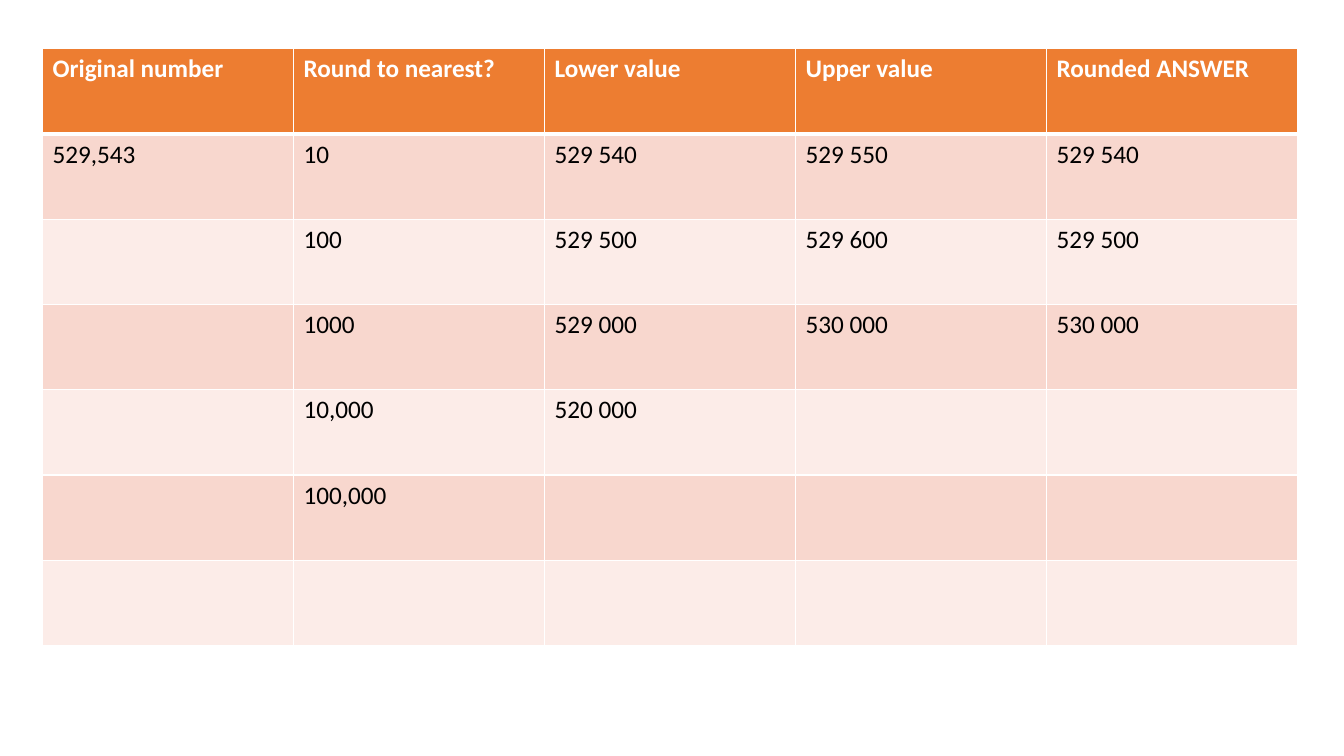
from dataclasses import dataclass

from lxml.etree import SubElement
from pptx import Presentation
from pptx.dml.color import RGBColor
from pptx.oxml.ns import qn
from pptx.slide import Slide
from pptx.table import _Cell
from pptx.util import Pt


@dataclass(frozen=True)
class Theme:
    font: str = "Calibri"
    text_size: float = 18
    header_fill: str = "ED7D31"
    header_text: str = "FFFFFF"
    band_fills: tuple[str, str] = ("F8D7CE", "FCECE8")
    body_text: str = "000000"
    border: str = "FFFFFF"
    thin_border: float = 1
    thick_border: float = 3


@dataclass(frozen=True)
class CellStyle:
    fill: str
    color: str
    bold: bool
    top_border: float
    bottom_border: float


@dataclass(frozen=True)
class RoundingRow:
    original: str = ""
    nearest: str = ""
    lower: str = ""
    upper: str = ""
    answer: str = ""

    def values(self) -> tuple[str, ...]:
        return self.original, self.nearest, self.lower, self.upper, self.answer


THEME = Theme()
PAGE_WIDTH, PAGE_HEIGHT = 960, 540
TABLE_LEFT, TABLE_TOP = 30.4, 34.8
COLUMN_WIDTH, ROW_HEIGHT = 179.3, 60.9

ROWS = [
    RoundingRow("Original number", "Round to nearest?", "Lower value",
                "Upper value", "Rounded ANSWER"),
    RoundingRow("529,543", "10", "529 540", "529 550", "529 540"),
    RoundingRow("", "100", "529 500", "529 600", "529 500"),
    RoundingRow("", "1000", "529 000", "530 000", "530 000"),
    RoundingRow("", "10,000", "520 000"),
    RoundingRow("", "100,000"),
    RoundingRow(),
]


def row_style(row_index: int) -> CellStyle:
    """Give the header its own style and alternate the bands below it."""
    if row_index == 0:
        return CellStyle(THEME.header_fill, THEME.header_text, True,
                         THEME.thin_border, THEME.thick_border)
    top_border = THEME.thick_border if row_index == 1 else THEME.thin_border
    return CellStyle(THEME.band_fills[(row_index - 1) % 2], THEME.body_text, False,
                     top_border, THEME.thin_border)


def set_borders(cell: _Cell, style: CellStyle) -> None:
    """Add the four edges; they must precede the fill in the cell properties."""
    properties = cell._tc.get_or_add_tcPr()
    widths = {
        "a:lnL": THEME.thin_border,
        "a:lnR": THEME.thin_border,
        "a:lnT": style.top_border,
        "a:lnB": style.bottom_border,
    }
    for edge, width in widths.items():
        line = SubElement(properties, qn(edge), w=str(Pt(width)))
        solid = SubElement(line, qn("a:solidFill"))
        SubElement(solid, qn("a:srgbClr"), val=THEME.border)


def fill_cell(cell: _Cell, text: str, style: CellStyle) -> None:
    set_borders(cell, style)
    cell.fill.solid()
    cell.fill.fore_color.rgb = RGBColor.from_string(style.fill)
    cell.text_frame.text = text
    for paragraph in cell.text_frame.paragraphs:
        for span in paragraph.runs:
            span.font.name = THEME.font
            span.font.size = Pt(THEME.text_size)
            span.font.bold = style.bold
            span.font.color.rgb = RGBColor.from_string(style.color)


def add_rounding_table(page: Slide, rows: list[RoundingRow]) -> None:
    column_count = len(rows[0].values())
    table = page.shapes.add_table(
        len(rows), column_count, Pt(TABLE_LEFT), Pt(TABLE_TOP),
        Pt(COLUMN_WIDTH * column_count), Pt(ROW_HEIGHT * len(rows)),
    ).table
    for column in table.columns:
        column.width = Pt(COLUMN_WIDTH)
    for row_index, row in enumerate(rows):
        table.rows[row_index].height = Pt(ROW_HEIGHT)
        style = row_style(row_index)
        for column_index, text in enumerate(row.values()):
            fill_cell(table.cell(row_index, column_index), text, style)


def main() -> None:
    deck = Presentation()
    deck.slide_width, deck.slide_height = Pt(PAGE_WIDTH), Pt(PAGE_HEIGHT)
    page = deck.slides.add_slide(deck.slide_layouts[6])
    add_rounding_table(page, ROWS)
    deck.save("out.pptx")


if __name__ == "__main__":
    main()
